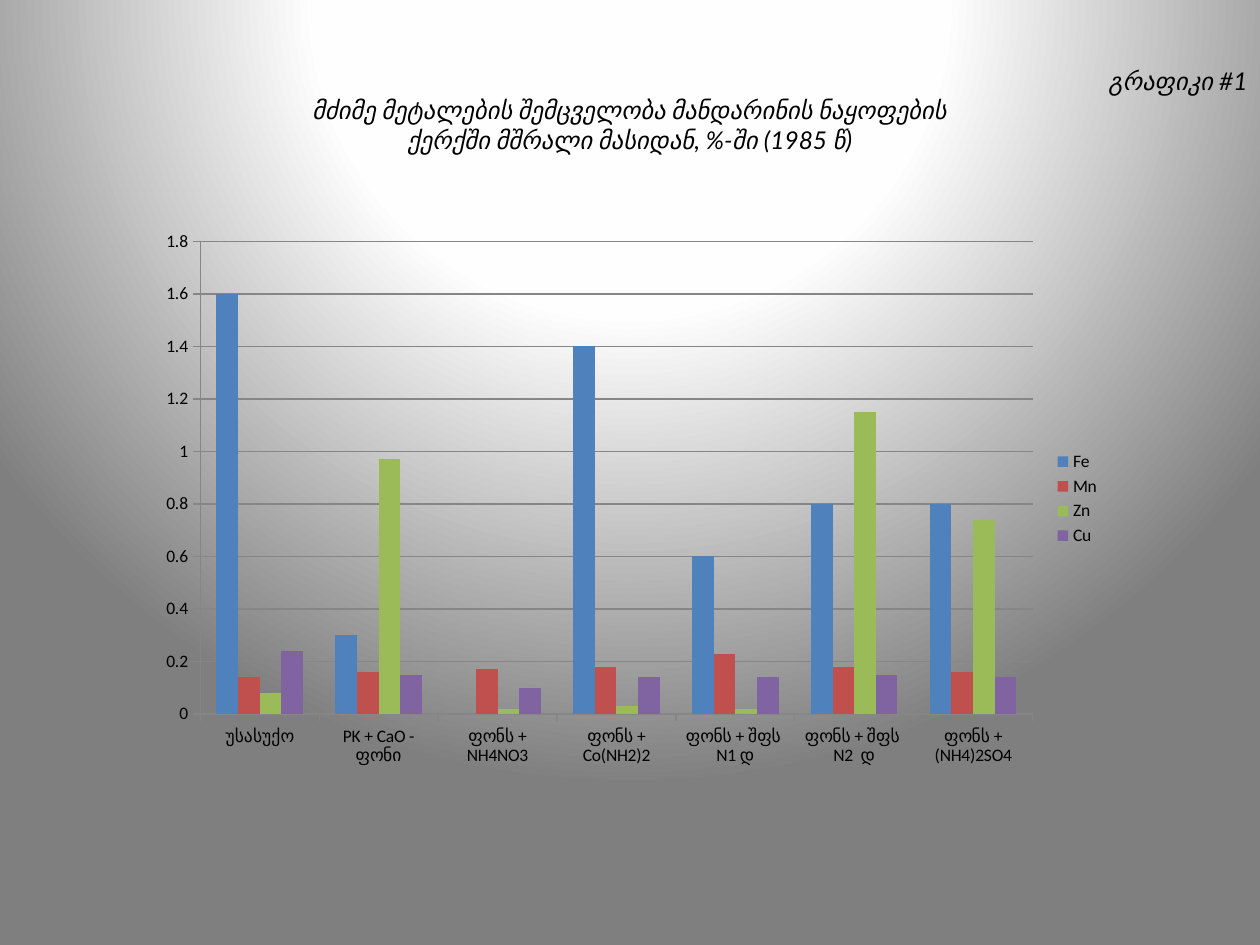
from pptx import Presentation
from pptx.chart.data import CategoryChartData
from pptx.dml.color import RGBColor
from pptx.enum.chart import XL_CHART_TYPE as ChartType, XL_LEGEND_POSITION as LegendPosition
from pptx.enum.chart import XL_TICK_MARK as TickMark
from pptx.enum.text import MSO_ANCHOR as Anchor, PP_ALIGN as Align
from pptx.oxml import parse_xml
from pptx.oxml.ns import nsdecls, qn
from pptx.util import Pt

# Content
HEADING = [
    ("გრაფიკი #1", Align.RIGHT),
    ("მძიმე მეტალების შემცველობა მანდარინის ნაყოფების", Align.CENTER),
    ("ქერქში მშრალი მასიდან, %-ში (1985 წ)", Align.CENTER),
]
TREATMENTS = [
    "უსასუქო", "PK + CaO - ფონი", "ფონს + NH4NO3", "ფონს + Co(NH2)2",
    "ფონს + შფს  N1 დ", "ფონს + შფს  N2  დ", "ფონს + (NH4)2SO4",
]
METALS = {
    "Fe": (1.6, 0.3, 0, 1.4, 0.6, 0.8, 0.8),
    "Mn": (0.14, 0.16, 0.17, 0.18, 0.23, 0.18, 0.16),
    "Zn": (0.08, 0.97, 0.02, 0.03, 0.02, 1.15, 0.74),
    "Cu": (0.24, 0.15, 0.1, 0.14, 0.14, 0.15, 0.14),
}

THEME = {
    "text": "000000", "line": "868686",
    "metals": ("4F81BD", "C0504D", "9BBB59", "8064A2"),
    "glow": ((0, "FFFFFF"), (40, "FEFEFE"), (100, "7F7F7F")),
    "heading_font": "Lato", "heading_size": 14,
    "chart_font": "Calibri", "chart_size": 10,
}
PAGE_WIDTH, PAGE_HEIGHT = 720, 540
HEADING_BOX = (0, 0, PAGE_WIDTH, 114)
CHART_BOX = (84, 126, 552, 318)


def color(name):
    return RGBColor.from_string(THEME[name])


def style_font(font, role):
    font.name = THEME[role + "_font"]
    font.size = Pt(THEME[role + "_size"])
    font.color.rgb = color("text")


def paint_background(page):
    """Round gradient centred above the top edge of the page."""
    page.background.fill.gradient()
    stops = "".join(
        f'<a:gs pos="{place * 1000}"><a:srgbClr val="{shade}"/></a:gs>'
        for place, shade in THEME["glow"])
    glow = parse_xml(
        f'<a:gradFill {nsdecls("a")} rotWithShape="1"><a:gsLst>{stops}</a:gsLst>'
        '<a:path path="circle"><a:fillToRect l="50000" t="-80000" r="50000" b="180000"/>'
        '</a:path></a:gradFill>')
    plain = next(page.element.iter(qn("a:gradFill")))
    plain.getparent().replace(plain, glow)


def add_heading(page):
    box = page.shapes.add_textbox(*map(Pt, HEADING_BOX))
    frame = box.text_frame
    frame.word_wrap = True
    frame.vertical_anchor = Anchor.MIDDLE
    frame.margin_top, frame.margin_bottom = Pt(16), Pt(4)
    for index, (words, align) in enumerate(HEADING):
        para = frame.add_paragraph() if index else frame.paragraphs[0]
        para.alignment = align
        span = para.add_run()
        span.text = words
        style_font(span.font, "heading")
        span.font.italic = True


def add_metal_chart(page):
    data = CategoryChartData()
    data.categories = TREATMENTS
    for metal, shares in METALS.items():
        data.add_series(metal, shares)
    chart = page.shapes.add_chart(
        ChartType.COLUMN_CLUSTERED, *map(Pt, CHART_BOX), data).chart
    style_font(chart.font, "chart")
    chart.has_title = False
    chart.has_legend = True
    chart.legend.position = LegendPosition.RIGHT
    chart.legend.include_in_layout = False

    # Columns
    plot = chart.plots[0]
    plot.gap_width, plot.overlap = 150, 0
    plot.vary_by_categories = False
    for series, shade in zip(plot.series, THEME["metals"]):
        series.format.fill.solid()
        series.format.fill.fore_color.rgb = RGBColor.from_string(shade)

    # Axes and grid
    scale = chart.value_axis
    scale.minimum_scale, scale.maximum_scale, scale.major_unit = 0, 1.8, 0.2
    scale.has_major_gridlines = True
    for axis in (scale, chart.category_axis):
        axis.major_tick_mark = TickMark.OUTSIDE
        axis.minor_tick_mark = TickMark.NONE
    for part in (scale, scale.major_gridlines, chart.category_axis):
        part.format.line.color.rgb = color("line")
        part.format.line.width = Pt(0.75)


def main():
    deck = Presentation()
    deck.slide_width, deck.slide_height = Pt(PAGE_WIDTH), Pt(PAGE_HEIGHT)
    page = deck.slides.add_slide(deck.slide_layouts[6])
    paint_background(page)
    add_heading(page)
    add_metal_chart(page)
    deck.save("out.pptx")


if __name__ == "__main__":
    main()
